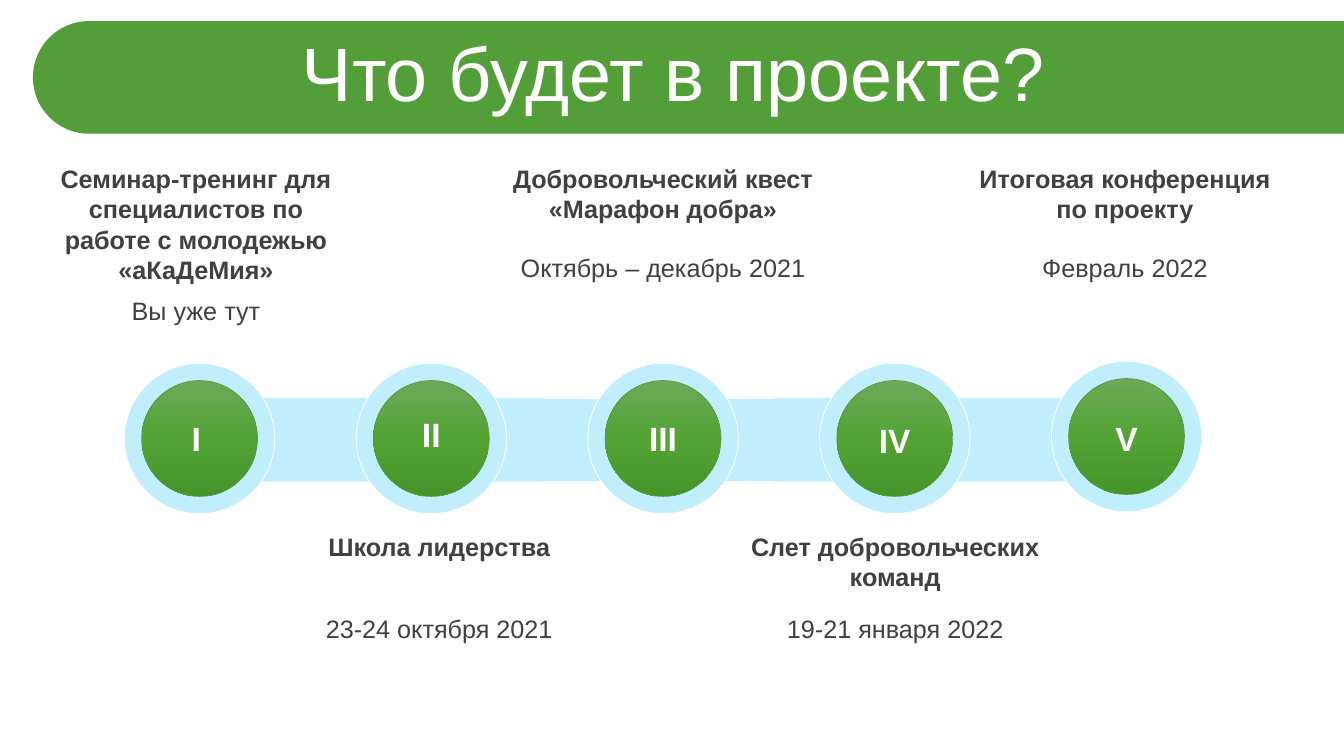
from copy import deepcopy
from dataclasses import dataclass

from pptx import Presentation
from pptx.dml.color import RGBColor
from pptx.enum.shapes import MSO_SHAPE as Shape
from pptx.enum.text import MSO_ANCHOR as Anchor, PP_ALIGN as Align
from pptx.oxml.ns import qn
from pptx.util import Cm, Pt

FONT = "Arial"
WHITE, GREEN, PALE_BLUE, DARK_GREY = "FFFFFF", "549E39", "C1EEFC", "404040"
CORE_GRADIENT = [(0, "6BAA59"), (0.5, "52A334"), (1, "46952A")]

FIRST_X, STAGE_PITCH = 5.03, 5.84
RING_SIZE, CORE_SIZE = 3.79, 2.92
LINE_HEIGHT = 0.77
TOP_ROW, BOTTOM_ROW = 3.99, 13.26


@dataclass
class Band:
    left: float
    width: float
    line: str | None = None


@dataclass
class Stage:
    numeral: str
    heading: str
    date: str
    text_center: float
    heading_width: float
    heading_lines: int
    heading_top: float
    date_top: float
    center_y: float = 11.05
    numeral_y: float = 11.04
    numeral_shift: float = 0


BANDS = [Band(12.93, 6.88, WHITE), Band(19.51, 9.25), Band(5.05, 8.66)]

STAGES = [
    Stage("I", "Семинар-тренинг для специалистов по работе с молодежью «аКаДеМия»",
          "Вы уже тут", 4.94, 7.95, 4, TOP_ROW, 7.32, numeral_shift=-0.08),
    Stage("II", "Школа лидерства", "23-24 октября 2021",
          11.07, 7.57, 1, BOTTOM_ROW, 15.32, numeral_y=10.93),
    Stage("III", "Добровольческий квест «Марафон добра»", "Октябрь – декабрь 2021",
          16.71, 8.23, 2, TOP_ROW, 6.22),
    Stage("IV", "Слет добровольческих команд", "19-21 января 2022",
          22.56, 8.79, 2, BOTTOM_ROW, 15.32, numeral_y=11.09),
    Stage("V", "Итоговая конференция по проекту", "Февраль 2022",
          28.35, 8.23, 2, TOP_ROW, 6.22, center_y=11.0),
]


def color(value: str) -> RGBColor:
    return RGBColor.from_string(value)


def add_shape(slide, kind, left: float, top: float, width: float, height: float,
              fill: str | None = None, line: str | None = None):
    shape = slide.shapes.add_shape(kind, Cm(left), Cm(top), Cm(width), Cm(height))
    shape.shadow.inherit = False
    if fill:
        shape.fill.solid()
        shape.fill.fore_color.rgb = color(fill)
    if line:
        shape.line.color.rgb = color(line)
        shape.line.width = Pt(0.5)
    else:
        shape.line.fill.background()
    return shape


def add_circle(slide, center_x: float, center_y: float, size: float,
               fill: str | None, line: str):
    return add_shape(slide, Shape.OVAL, center_x - size / 2, center_y - size / 2,
                     size, size, fill, line)


def fill_core(shape) -> None:
    """Apply the vertical three-stop gradient."""
    shape.fill.gradient()
    shape.fill.gradient_angle = 270
    stop_list = shape.element.spPr.find(".//" + qn("a:gsLst"))
    stop_list.append(deepcopy(stop_list[-1]))
    for stop, (position, value) in zip(shape.fill.gradient_stops, CORE_GRADIENT):
        stop.position = position
        stop.color.rgb = color(value)


def add_text(slide, text: str, center_x: float, top: float, width: float, height: float,
             size: float, text_color: str, bold: bool = False, anchor=Anchor.TOP):
    box = slide.shapes.add_textbox(Cm(center_x - width / 2), Cm(top), Cm(width), Cm(height))
    frame = box.text_frame
    frame.word_wrap = True
    frame.vertical_anchor = anchor
    frame.margin_left = frame.margin_right = Cm(0.3)
    frame.margin_top = frame.margin_bottom = Cm(0.13)
    paragraph = frame.paragraphs[0]
    paragraph.text = text
    paragraph.alignment = Align.CENTER
    paragraph.font.name = FONT
    paragraph.font.size = Pt(size)
    paragraph.font.bold = bold
    paragraph.font.color.rgb = color(text_color)
    return paragraph


def add_title(slide) -> None:
    ribbon = add_shape(slide, Shape.ROUND_2_SAME_RECTANGLE, 15.93, -14.57, 2.84, 33.04, GREEN)
    ribbon.adjustments[0] = 0.5
    ribbon.rotation = 270
    title = add_text(slide, "Что будет в проекте?", 16.97, 0.94, 32.16, 2.01,
                     54, WHITE, anchor=Anchor.MIDDLE)
    title.line_spacing = 0.9
    title.space_before = Pt(10)


def add_stage(slide, stage: Stage, center_x: float) -> None:
    # Marker
    add_circle(slide, center_x, stage.center_y, RING_SIZE, PALE_BLUE, WHITE)
    fill_core(add_circle(slide, center_x, stage.center_y, CORE_SIZE, None, GREEN))
    add_text(slide, stage.numeral, center_x + stage.numeral_shift, stage.numeral_y - 0.9,
             CORE_SIZE, 1.8, 24, WHITE, True, Anchor.MIDDLE)
    # Caption
    add_text(slide, stage.heading, stage.text_center, stage.heading_top, stage.heading_width,
             0.26 + stage.heading_lines * LINE_HEIGHT, 18, DARK_GREY, True)
    add_text(slide, stage.date, stage.text_center, stage.date_top,
             9.09, 0.26 + LINE_HEIGHT, 18, DARK_GREY)


def main() -> None:
    presentation = Presentation()
    presentation.slide_width, presentation.slide_height = Cm(33.87), Cm(19.05)
    slide = presentation.slides.add_slide(presentation.slide_layouts[6])

    add_title(slide)

    # Timeline
    for band in BANDS:
        add_shape(slide, Shape.RECTANGLE, band.left, 10.03, band.width, 2.11,
                  PALE_BLUE, band.line)
    for index, stage in enumerate(STAGES):
        add_stage(slide, stage, FIRST_X + index * STAGE_PITCH)

    presentation.save("out.pptx")


if __name__ == "__main__":
    main()
